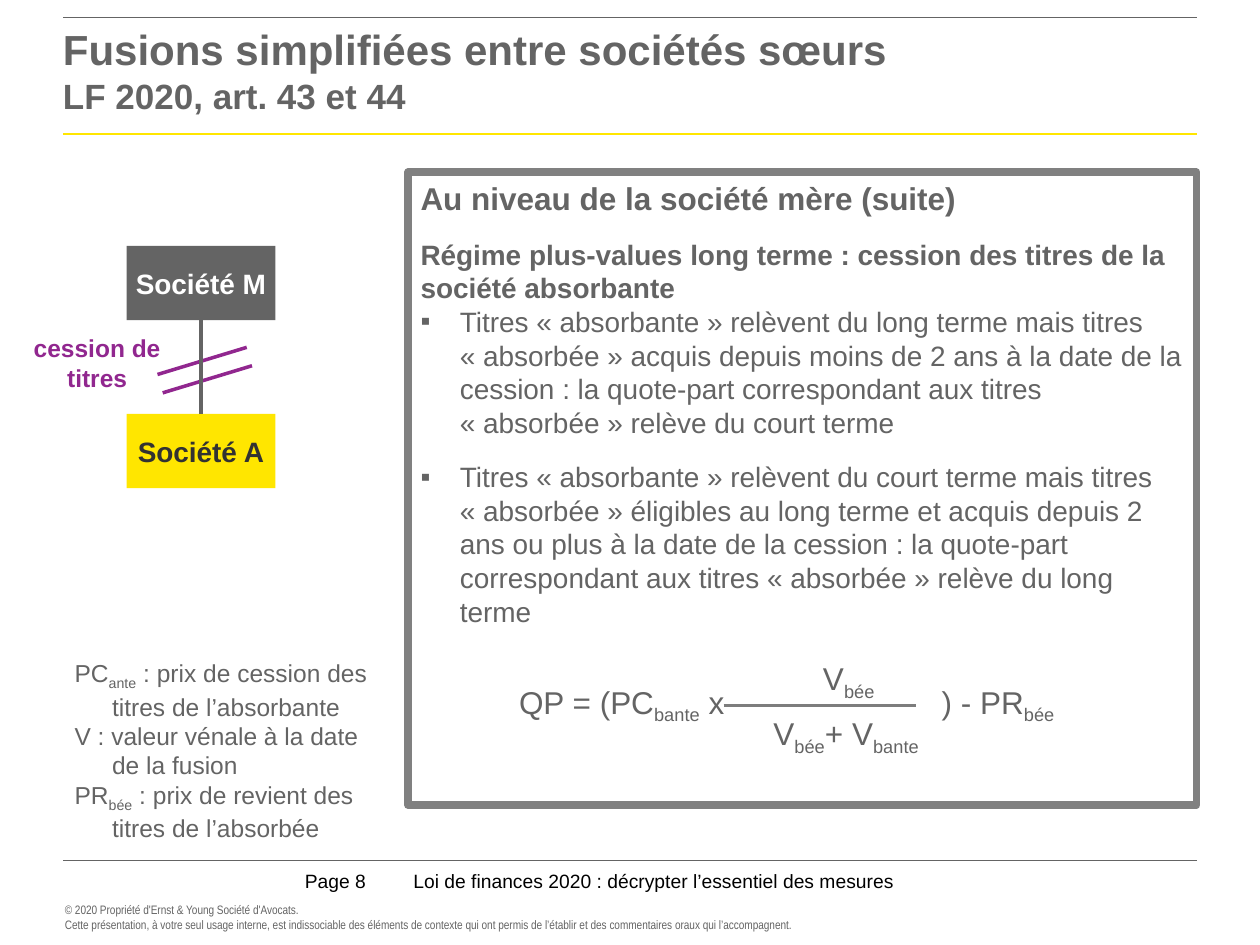
import pptx
import pptx.util
import pptx.dml.color
import pptx.enum.shapes
import pptx.enum.text
import pptx.oxml.ns
import lxml.etree

Pt = pptx.util.Pt
rgb = pptx.dml.color.RGBColor.from_string
qn = pptx.oxml.ns.qn
ALIGN = pptx.enum.text.PP_ALIGN
ANCHOR = pptx.enum.text.MSO_ANCHOR
RECT = pptx.enum.shapes.MSO_SHAPE.RECTANGLE
STRAIGHT = pptx.enum.shapes.MSO_CONNECTOR.STRAIGHT
GREY, YELLOW, PURPLE, BLACK = "646464", "FFE600", "91278F", "000000"


def add_runs(p, text, size, color=GREY, bold=False, font="Arial"):
    for i, part in enumerate(text.split("|")):
        r = p.add_run()
        r.text = part
        r.font.size = Pt(size)
        r.font.name = font
        r.font.bold = bold
        r.font.color.rgb = rgb(color)
        if i % 2:
            r._r.get_or_add_rPr().set("baseline", "-25000")


def add_line(x1, y1, x2, y2, color, width):
    c = s.shapes.add_connector(STRAIGHT, Pt(x1), Pt(y1), Pt(x2), Pt(y2))
    c.line.color.rgb = rgb(color)
    c.line.width = Pt(width)
    lxml.etree.SubElement(c._element.spPr, qn("a:effectLst"))
    return c


prs = pptx.Presentation()
prs.slide_width, prs.slide_height = Pt(720), Pt(540)
s = prs.slides.add_slide(prs.slide_layouts[6])

for y, color, width in [(10, GREY, 0.5), (76.5, YELLOW, 1), (491.5, GREY, 0.25)]:
    add_line(36, y, 684, y, color, width)

sp = s.shapes.add_textbox(Pt(36), Pt(10), Pt(648), Pt(67.5))
tf = sp.text_frame
tf.word_wrap = True
tf.margin_left = tf.margin_right = tf.margin_bottom = 0
p = tf.paragraphs[0]
add_runs(p, "Fusions simplifiées entre sociétés sœurs", 24, bold=True)
p.add_line_break()
add_runs(p, "LF 2020, art. 43 et 44", 20, bold=True)

sp = s.shapes.add_shape(RECT, Pt(233.2), Pt(98.5), Pt(450.5), Pt(361.5))
sp.shadow.inherit = False
sp.fill.solid()
sp.fill.fore_color.rgb = rgb("FFFFFF")
sp.line.color.rgb = rgb("808080")
sp.line.width = Pt(4.5)
tf = sp.text_frame
tf.word_wrap = True
tf.vertical_anchor = ANCHOR.TOP
regime = [
    ("Au niveau de la société mère (suite)", 18, True, 0),
    ("Régime plus-values long terme : cession des titres de la société absorbante", 16, True, 12),
    ("Titres « absorbante » relèvent du long terme mais titres « absorbée » acquis depuis moins de 2 ans "
     "à la date de la cession : la quote-part correspondant aux titres « absorbée » relève du court terme",
     16, False, 0),
    ("Titres « absorbante » relèvent du court terme mais titres « absorbée » éligibles au long terme et "
     "acquis depuis 2 ans ou plus à la date de la cession : la quote-part correspondant aux titres "
     "« absorbée » relève du long terme", 16, False, 12),
]
for i, (text, size, bold, before) in enumerate(regime):
    p = tf.add_paragraph() if i else tf.paragraphs[0]
    p.alignment = ALIGN.LEFT
    p.space_before = Pt(before)
    if not bold:
        pPr = p._p.get_or_add_pPr()
        pPr.set("marL", str(Pt(22.5)))
        pPr.set("indent", str(-Pt(22.5)))
        lxml.etree.SubElement(pPr, qn("a:buFont"), typeface="Arial")
        lxml.etree.SubElement(pPr, qn("a:buChar"), char="▪")
    add_runs(p, text.replace("« ", "«\u00a0").replace(" »", "\u00a0»"), size, bold=bold)

labels = [
    ("cession de titres", -3.5, 187, 118, 41, 14, PURPLE, True, ALIGN.CENTER),
    ("V|bée", 453, 373, 64, 29, 18, GREY, False, ALIGN.CENTER),
    ("V|bée|+ V|bante", 423.5, 404.5, 120, 29, 18, GREY, False, ALIGN.CENTER),
    ("QP = (PC|bante| x\t) - PR|bée", 289.5, 386.5, 366.5, 51, 18, GREY, False, ALIGN.LEFT),
]
for text, x, y, w, h, size, color, bold, align in labels:
    sp = s.shapes.add_textbox(Pt(x), Pt(y), Pt(w), Pt(h))
    tf = sp.text_frame
    tf.word_wrap = True
    p = tf.paragraphs[0]
    p.alignment = align
    if "\t" in text:
        tabs = lxml.etree.SubElement(p._p.get_or_add_pPr(), qn("a:tabLst"))
        lxml.etree.SubElement(tabs, qn("a:tab"), pos=str(Pt(241.5)), algn="l")
    add_runs(p, text, size, color, bold)
add_line(413.5, 403.2, 523.5, 403.2, "7D7D7D", 1.5)

sp = s.shapes.add_textbox(Pt(35.5), Pt(372.5), Pt(190), Pt(109))
tf = sp.text_frame
tf.word_wrap = True
legend = [
    "PC|ante| : prix de cession des titres de l’absorbante",
    "V : valeur vénale à la date de la fusion",
    "PR|bée| : prix de revient des titres de l’absorbée",
]
for i, text in enumerate(legend):
    p = tf.add_paragraph() if i else tf.paragraphs[0]
    pPr = p._p.get_or_add_pPr()
    pPr.set("marL", str(Pt(21.5)))
    pPr.set("indent", str(-Pt(21.5)))
    add_runs(p, text, 14)

for y in (214, 224.5):
    x = 90 if y == 214 else 93
    add_line(x, y, x + 51, y - 15.5, PURPLE, 2)

companies = []
for name, y, fill, color in [("Société M", 140.5, GREY, "FFFFFF"), ("Société A", 236.5, YELLOW, "323232")]:
    sp = s.shapes.add_shape(RECT, Pt(72.3), Pt(y), Pt(85), Pt(42.5))
    sp.shadow.inherit = False
    sp.fill.solid()
    sp.fill.fore_color.rgb = rgb(fill)
    sp.line.fill.background()
    tf = sp.text_frame
    tf.word_wrap = True
    tf.vertical_anchor = ANCHOR.MIDDLE
    tf.margin_left = tf.margin_right = Pt(3)
    tf.margin_top = tf.margin_bottom = 0
    p = tf.paragraphs[0]
    p.alignment = ALIGN.CENTER
    add_runs(p, name, 16, color, True)
    companies.append(sp)
link = add_line(114.8, 183, 114.8, 236.5, GREY, 2.25)
link.begin_connect(companies[0], 2)
link.end_connect(companies[1], 0)

for text, x, w in [("Page 8", 174.2, 52.5), ("Loi de finances 2020 : décrypter l’essentiel des mesures", 236.2, 334)]:
    sp = s.shapes.add_textbox(Pt(x), Pt(497), Pt(w), Pt(16))
    tf = sp.text_frame
    tf.word_wrap = True
    tf.margin_left = tf.margin_right = tf.margin_top = tf.margin_bottom = 0
    add_runs(tf.paragraphs[0], text, 11, BLACK)

sp = s.shapes.add_textbox(Pt(30), Pt(512), Pt(540), Pt(24.5))
tf = sp.text_frame
tf.word_wrap = True
p = tf.paragraphs[0]
add_runs(p, "© 2020 Propriété d'Ernst & Young Société d'Avocats.", 7, font="Arial Narrow")
p.add_line_break()
add_runs(p, "Cette présentation, à votre seul usage interne, est indissociable des éléments de contexte qui ont "
         "permis de l’établir et des commentaires oraux qui l’accompagnent.", 7, font="Arial Narrow")

prs.save("out.pptx")
